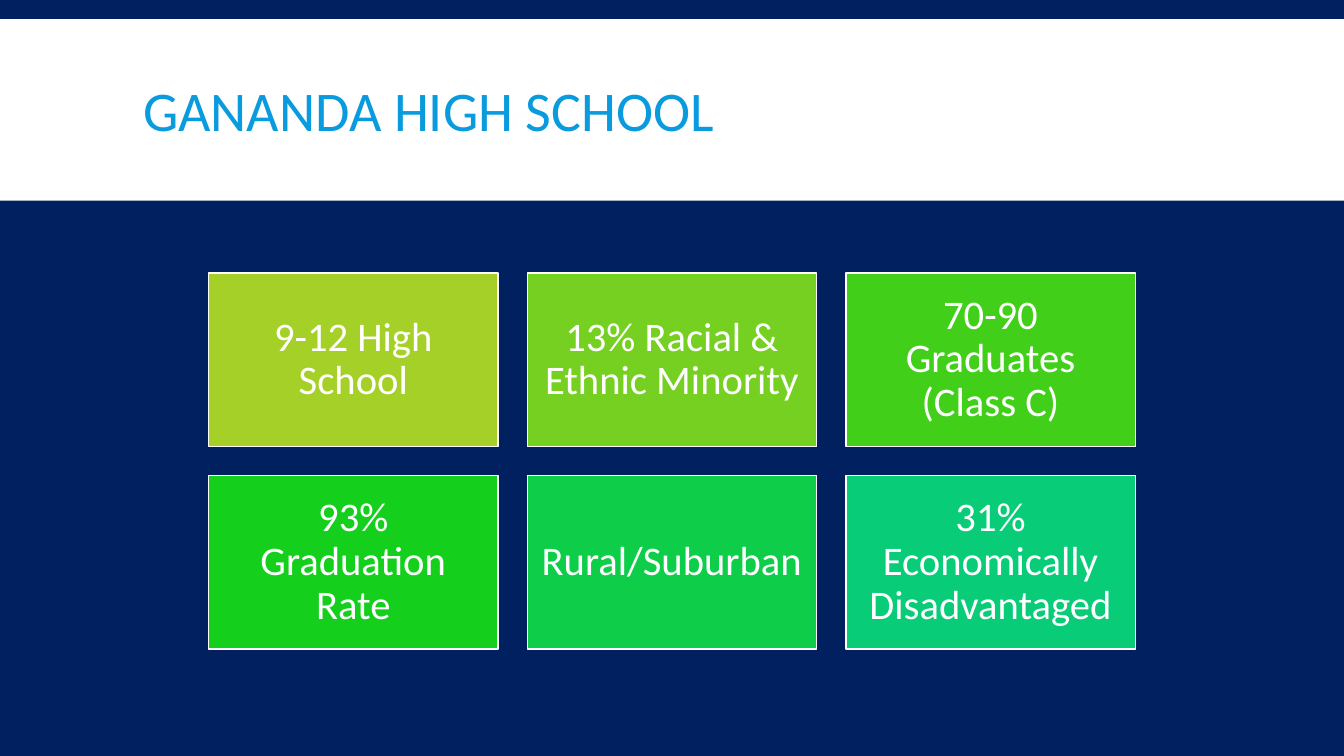
from pptx import Presentation
from pptx.dml.color import RGBColor
from pptx.enum.shapes import MSO_SHAPE as Shape
from pptx.enum.text import MSO_ANCHOR as Anchor, MSO_AUTO_SIZE as AutoSize, PP_ALIGN as Align
from pptx.util import Inches, Pt

COLORS = {"navy": "002060", "white": "FFFFFF", "title": "099BDD"}
FONT = "Calibri"

# Facts in reading order, each with its tile colour
FACTS = [
    ("9-12 High School", "A5D028"),
    ("13% Racial & Ethnic Minority", "75D021"),
    ("70-90 Graduates (Class C)", "42CF1A"),
    ("93% Graduation Rate", "14CF1C"),
    ("Rural/Suburban", "0ECE49"),
    ("31% Economically Disadvantaged", "08CC78"),
]

# Tile grid, in inches
COLUMNS = 3
GRID_LEFT, GRID_TOP = 2.07, 2.71
TILE_WIDTH, TILE_HEIGHT = 2.87, 1.72
GAP = 0.29
TILE_INSET = 0.12


def rgb(hex_color):
    return RGBColor.from_string(hex_color)


def add_rectangle(slide, left, top, width, height, fill):
    rectangle = slide.shapes.add_shape(
        Shape.RECTANGLE, Inches(left), Inches(top), Inches(width), Inches(height))
    rectangle.shadow.inherit = False
    rectangle.fill.solid()
    rectangle.fill.fore_color.rgb = rgb(fill)
    rectangle.line.fill.background()
    return rectangle


def write_text(frame, text, size, color, align, line_spacing):
    frame.word_wrap = True
    frame.auto_size = AutoSize.NONE
    frame.vertical_anchor = Anchor.MIDDLE
    paragraph = frame.paragraphs[0]
    paragraph.alignment = align
    paragraph.line_spacing = line_spacing
    run = paragraph.add_run()
    run.text = text
    run.font.name = FONT
    run.font.size = Pt(size)
    run.font.color.rgb = rgb(color)


def add_title_band(slide):
    band = add_rectangle(slide, 0, 0.19, 13.33, 1.8, COLORS["white"])
    # Send the band behind the title
    band._element.getparent().insert(2, band._element)


def add_title(slide, text):
    title = slide.shapes.title
    title.left, title.top = Inches(1.32), Inches(0.31)
    title.width, title.height = Inches(10.7), Inches(1.65)
    write_text(title.text_frame, text, 40, COLORS["title"], Align.LEFT, 0.85)


def add_fact_tile(slide, index, fact, fill):
    row, column = divmod(index, COLUMNS)
    tile = add_rectangle(
        slide,
        GRID_LEFT + column * (TILE_WIDTH + GAP),
        GRID_TOP + row * (TILE_HEIGHT + GAP),
        TILE_WIDTH, TILE_HEIGHT, fill)
    tile.line.color.rgb = rgb(COLORS["white"])
    tile.line.width = Pt(1)
    frame = tile.text_frame
    frame.margin_left = frame.margin_right = Inches(TILE_INSET)
    frame.margin_top = frame.margin_bottom = Inches(TILE_INSET)
    write_text(frame, fact, 29, COLORS["white"], Align.CENTER, 0.9)


def main():
    deck = Presentation()
    deck.slide_width, deck.slide_height = Inches(13.33), Inches(7.5)
    slide = deck.slides.add_slide(deck.slide_layouts[5])
    slide.background.fill.solid()
    slide.background.fill.fore_color.rgb = rgb(COLORS["navy"])

    # Heading
    add_title_band(slide)
    add_title(slide, "GANANDA HIGH SCHOOL")

    # School facts
    for index, (fact, fill) in enumerate(FACTS):
        add_fact_tile(slide, index, fact, fill)

    deck.save("out.pptx")


if __name__ == "__main__":
    main()
